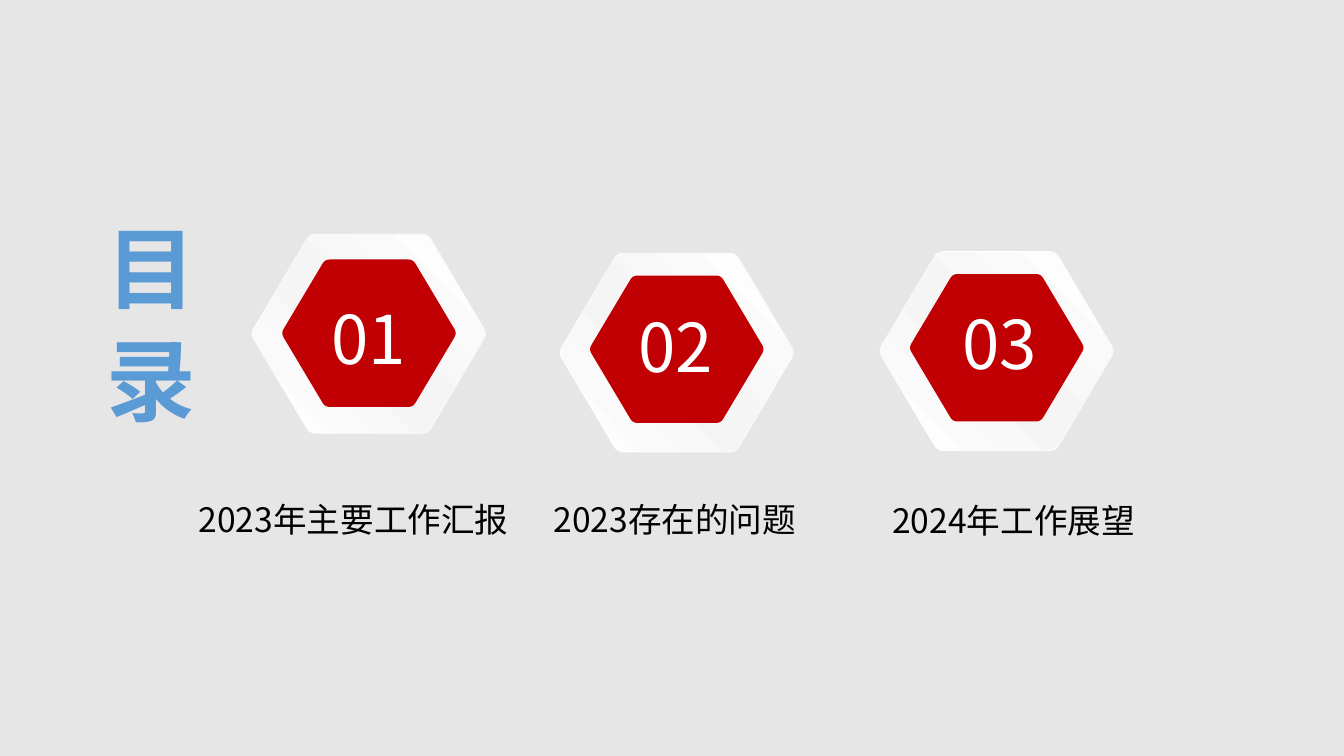
from copy import deepcopy

from pptx import Presentation
from pptx.dml.color import RGBColor
from pptx.oxml.ns import qn
from pptx.oxml.xmlchemy import OxmlElement
from pptx.util import Pt

COLORS = {
    "background": "E7E6E6",
    "white": "FFFFFF",
    "sheen": "F5F5F5",
    "red": "C00002",
    "blue": "5B9BD5",
    "black": "000000",
}
NUMBER_FONT = "Noto Sans CJK SC"
CAPTION_FONT = "Noto Sans CJK JP"
SHEEN_STOPS = [(0, "white"), (0.47, "sheen"), (1, "white")]
TITLE_BOX = (38.9, 113, 72.7, 118.8)
BADGE_SIZE = (126, 107)
ITEMS = [
    {"position": (134.6, 125.3), "number": "01", "core_top": 13.7,
     "number_box": (36, 30.2, 61.2, 51), "caption": "2023年主要工作汇报",
     "caption_box": (-35.2, 138.2, 211.7, 29)},
    {"position": (299.5, 135.4), "number": "02", "core_top": 12.2,
     "number_box": (35.3, 24.5, 64, 51), "caption": "2023存在的问题",
     "caption_box": (-10, 128.2, 163.4, 35)},
    {"position": (470.9, 134.6), "number": "03", "core_top": 12.2,
     "number_box": (37.4, 23.8, 67, 51), "caption": "2024年工作展望",
     "caption_box": (0, 129.6, 152.6, 29)},
]


def color(name):
    """Return the named colour."""
    return RGBColor.from_string(COLORS[name])


def add_text(shapes, box, text, size, font_name, color_name, bold=False):
    """Add a one-paragraph text box and return its text frame."""
    text_frame = shapes.add_textbox(*(Pt(value) for value in box)).text_frame
    text_frame.word_wrap = True
    text_frame.text = text
    font = text_frame.paragraphs[0].runs[0].font
    font.size, font.bold, font.name = Pt(size), bold, font_name
    font.color.rgb = color(color_name)
    east_asian = OxmlElement("a:ea")
    east_asian.set("typeface", font_name)
    font._element.find(qn("a:latin")).addnext(east_asian)
    return text_frame


def rounded_hexagon_points(box, rounding=0.055, steps=6):
    """Return the outline of a flat-topped hexagon with rounded corners."""
    left, top, width, height = box
    overhang, slant = 0.004 * width, 0.248 * width
    right, middle, bottom = left + width, top + height / 2, top + height
    corners = [
        (left + slant, top), (right - slant, top), (right + overhang, middle),
        (right - slant, bottom), (left + slant, bottom), (left - overhang, middle),
    ]
    points = []
    for index, corner in enumerate(corners):
        before, after = corners[index - 1], corners[(index + 1) % 6]
        for step in range(steps + 1):
            t = step / steps
            back, ahead = rounding * (1 - t) ** 2, rounding * t ** 2
            points.append(tuple(
                Pt(c + back * (b - c) + ahead * (a - c))
                for b, c, a in zip(before, corner, after)
            ))
    return points


def add_hexagon(shapes, box, color_name):
    """Add a filled rounded hexagon without an outline."""
    points = rounded_hexagon_points(box)
    builder = shapes.build_freeform(*points[0], scale=1.0)
    builder.add_line_segments(points[1:], close=True)
    shape = builder.convert_to_shape()
    shape.shadow.inherit = False
    shape.line.fill.background()
    shape.fill.solid()
    shape.fill.fore_color.rgb = color(color_name)
    return shape


def apply_sheen(shape):
    """Give a shape the diagonal three-stop gradient."""
    fill = shape.fill
    fill.gradient()
    fill.gradient_angle = 45
    first_stop = shape._element.spPr.find(".//" + qn("a:gs"))
    first_stop.addnext(deepcopy(first_stop))
    for stop, (position, name) in zip(fill.gradient_stops, SHEEN_STOPS):
        stop.position = position
        stop.color.rgb = color(name)


def add_item(slide, box, item):
    """Place a numbered hexagon badge and its caption."""
    left, top, width, height = box

    def place(x, y, *size):
        """Move a relative box onto the slide."""
        return (left + x, top + y, *size)

    badge = slide.shapes.add_group_shape().shapes
    add_hexagon(badge, box, "white")
    apply_sheen(add_hexagon(badge, place(0.5, 0.5, width - 1, height - 1), "white"))
    add_hexagon(badge, place(16.4, item["core_top"], 93.4, 79), "red")
    add_text(badge, place(*item["number_box"]), item["number"], 36, NUMBER_FONT, "white")
    add_text(slide.shapes, place(*item["caption_box"]), item["caption"], 18,
             CAPTION_FONT, "black")


def add_title(slide, box):
    """Place the vertical title."""
    text_frame = add_text(slide.shapes, box, "目 录", 48, NUMBER_FONT, "blue", bold=True)
    text_frame.word_wrap = False
    text_frame._txBody.bodyPr.set("vert", "eaVert")


def main():
    """Build and save the contents slide."""
    presentation = Presentation()
    presentation.slide_width, presentation.slide_height = Pt(720), Pt(405)
    slide = presentation.slides.add_slide(presentation.slide_layouts[6])
    slide.background.fill.solid()
    slide.background.fill.fore_color.rgb = color("background")
    for item in ITEMS:
        add_item(slide, (*item["position"], *BADGE_SIZE), item)
    add_title(slide, TITLE_BOX)
    presentation.save("out.pptx")


if __name__ == "__main__":
    main()
